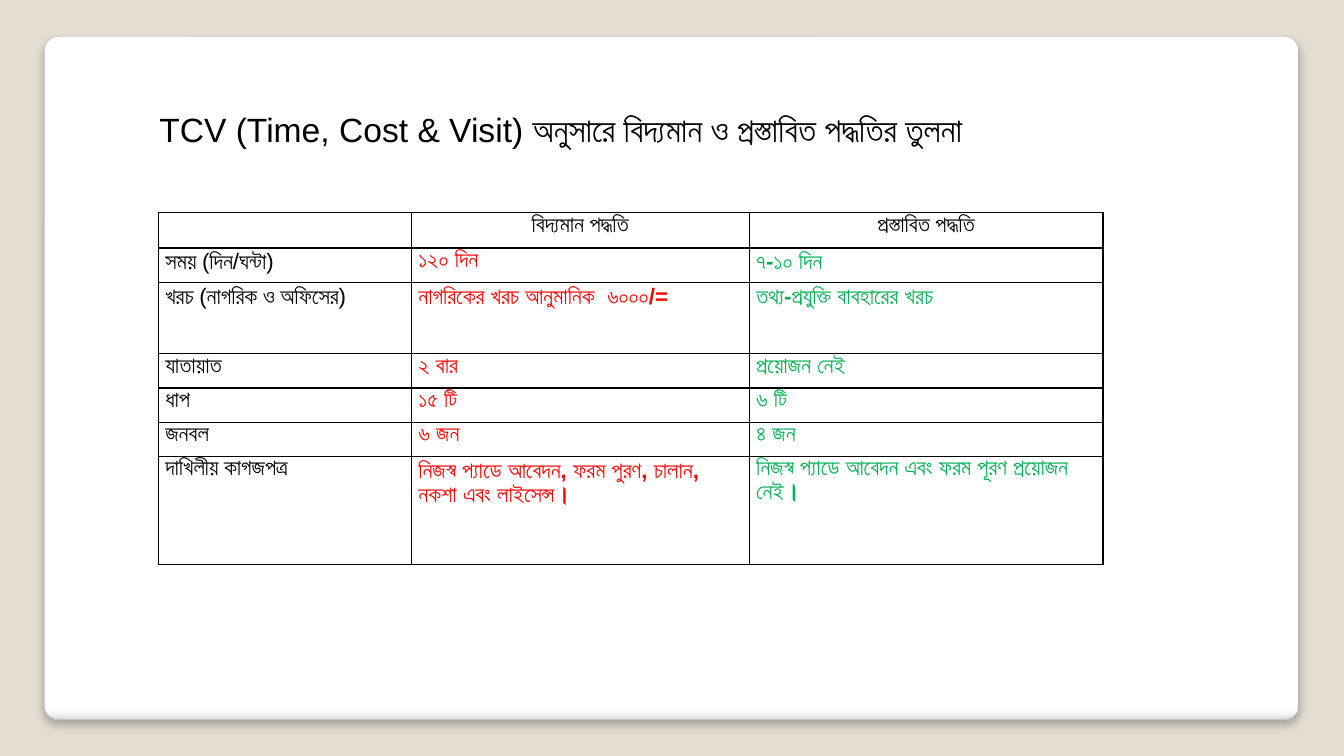
from dataclasses import dataclass

from lxml.etree import SubElement
from pptx import Presentation
from pptx.dml.color import RGBColor
from pptx.enum.shapes import MSO_SHAPE
from pptx.enum.text import MSO_ANCHOR, PP_ALIGN
from pptx.oxml import parse_xml
from pptx.oxml.ns import nsdecls, qn
from pptx.util import Inches, Pt


@dataclass(frozen=True)
class Theme:
    font: str = "Arial"
    background: str = "E3DED1"
    white: str = "FFFFFF"
    black: str = "000000"
    existing: str = "FF0000"
    proposed: str = "00B050"
    panel_line: str = "A4A4A4"
    panel_stops: tuple = ((0, "FFFFFF"), (98, "FFFFFF"), (99, "F7F7F7"), (100, "DADADA"))
    title_size: int = 24
    table_size: int = 16


THEME = Theme()

TITLE = "TCV (Time, Cost & Visit) অনুসারে বিদ্যমান ও প্রস্তাবিত পদ্ধতির তুলনা"
COL_WIDTHS = (2.51, 3.35, 3.51)
ROWS = (
    (0.35, ("", "বিদ্যমান পদ্ধতি", "প্রস্তাবিত পদ্ধতি")),
    (0.34, ("সময় (দিন/ঘন্টা)", "১২০ দিন", "৭-১০ দিন")),
    (0.71, ("খরচ (নাগরিক ও অফিসের)", "নাগরিকের খরচ আনুমানিক  ৬০০০/=", "তথ্য-প্রযুক্তি বাবহারের খরচ")),
    (0.34, ("যাতায়াত", "২ বার", "প্রয়োজন নেই")),
    (0.34, ("ধাপ", "১৫ টি", "৬ টি")),
    (0.34, ("জনবল", "৬ জন", "৪ জন")),
    (1.07, (
        "দাখিলীয় কাগজপত্র",
        "নিজস্ব প্যাডে আবেদন, ফরম পুরণ, চালান, নকশা এবং লাইসেন্স।",
        "নিজস্ব প্যাডে আবেদন এবং ফরম পূরণ প্রয়োজন নেই।",
    )),
)


def set_attrs(obj, values):
    for name, value in values.items():
        setattr(obj, name, value)


def write(p, text, size, color, bold=False, align=PP_ALIGN.LEFT):
    p.alignment = align
    p.font.size = Pt(size)
    if text:
        r = p.add_run()
        r.text = text
        set_attrs(r.font, {"name": THEME.font, "size": Pt(size), "bold": bold})
        r.font.color.rgb = RGBColor.from_string(color)


def add_panel(s, left, top, width, height):
    sp = s.shapes.add_shape(MSO_SHAPE.ROUNDED_RECTANGLE, left, top, width, height)
    sp.adjustments[0] = 0.021
    sp.fill.gradient()
    sp.fill.gradient_angle = 270
    stops = sp.element.spPr.find(".//" + qn("a:gsLst"))
    for stop in list(stops):
        stops.remove(stop)
    for pos, color in THEME.panel_stops:
        stop = SubElement(stops, qn("a:gs"), pos=str(pos * 1000))
        SubElement(stop, qn("a:srgbClr"), val=color)
    sp.line.color.rgb = RGBColor.from_string(THEME.panel_line)
    sp.line.width = Pt(0.16)
    sp.shadow.inherit = False
    sp.element.spPr.find(qn("a:effectLst")).append(parse_xml(
        f'<a:outerShdw {nsdecls("a")} blurRad="{Pt(6)}" dist="{Pt(4)}" dir="5400000" '
        f'algn="t" rotWithShape="0"><a:srgbClr val="{THEME.black}">'
        '<a:alpha val="25000"/></a:srgbClr></a:outerShdw>'
    ))
    s.shapes.title.element.addprevious(sp.element)


def add_title(s, left, top, width, height):
    sp = s.shapes.title
    set_attrs(sp, {"left": left, "top": top, "width": width, "height": height})
    tf = sp.text_frame
    set_attrs(tf, {"word_wrap": True, "vertical_anchor": MSO_ANCHOR.TOP})
    write(tf.paragraphs[0], TITLE, THEME.title_size, THEME.black)


def add_borders(cell):
    tc_pr = cell._tc.get_or_add_tcPr()
    for i, side in enumerate("LRTB"):
        tc_pr.insert(i, parse_xml(
            f'<a:ln{side} {nsdecls("a")} w="{Pt(1)}"><a:solidFill>'
            f'<a:srgbClr val="{THEME.black}"/></a:solidFill></a:ln{side}>'
        ))


def format_cell(cell, text, is_header, column):
    set_attrs(cell, {
        "margin_left": Inches(0.07), "margin_right": Inches(0.07),
        "margin_top": 0, "margin_bottom": 0, "vertical_anchor": MSO_ANCHOR.TOP,
    })
    is_value = column > 0 and not is_header
    if is_value:
        cell.fill.solid()
        cell.fill.fore_color.rgb = RGBColor.from_string(THEME.white)
    else:
        cell.fill.background()
    add_borders(cell)
    color = (THEME.black, THEME.existing, THEME.proposed)[column] if is_value else THEME.black
    p = cell.text_frame.paragraphs[0]
    p.line_spacing = 1.07
    write(p, text, THEME.table_size, color, is_value,
          PP_ALIGN.CENTER if is_header else PP_ALIGN.LEFT)


def add_comparison(s, left, top, width, height):
    table = s.shapes.add_table(len(ROWS), len(COL_WIDTHS), left, top, width, height).table
    set_attrs(table, {"first_row": False, "horz_banding": False})
    for col, col_width in zip(table.columns, COL_WIDTHS):
        col.width = Inches(col_width)
    for i, (row_height, texts) in enumerate(ROWS):
        table.rows[i].height = Inches(row_height)
        for j, text in enumerate(texts):
            format_cell(table.cell(i, j), text, i == 0, j)


def main():
    prs = Presentation()
    set_attrs(prs, {"slide_width": Inches(13.33), "slide_height": Inches(7.5)})
    s = prs.slides.add_slide(prs.slide_layouts[5])
    s.background.fill.solid()
    s.background.fill.fore_color.rgb = RGBColor.from_string(THEME.background)
    add_panel(s, Inches(0.44), Inches(0.36), Inches(12.44), Inches(6.78))
    add_title(s, Inches(1.48), Inches(1.03), Inches(9.72), Inches(0.5))
    add_comparison(s, Inches(1.57), Inches(2.11), Inches(9.36), Inches(3.49))
    prs.save("out.pptx")


if __name__ == "__main__":
    main()
